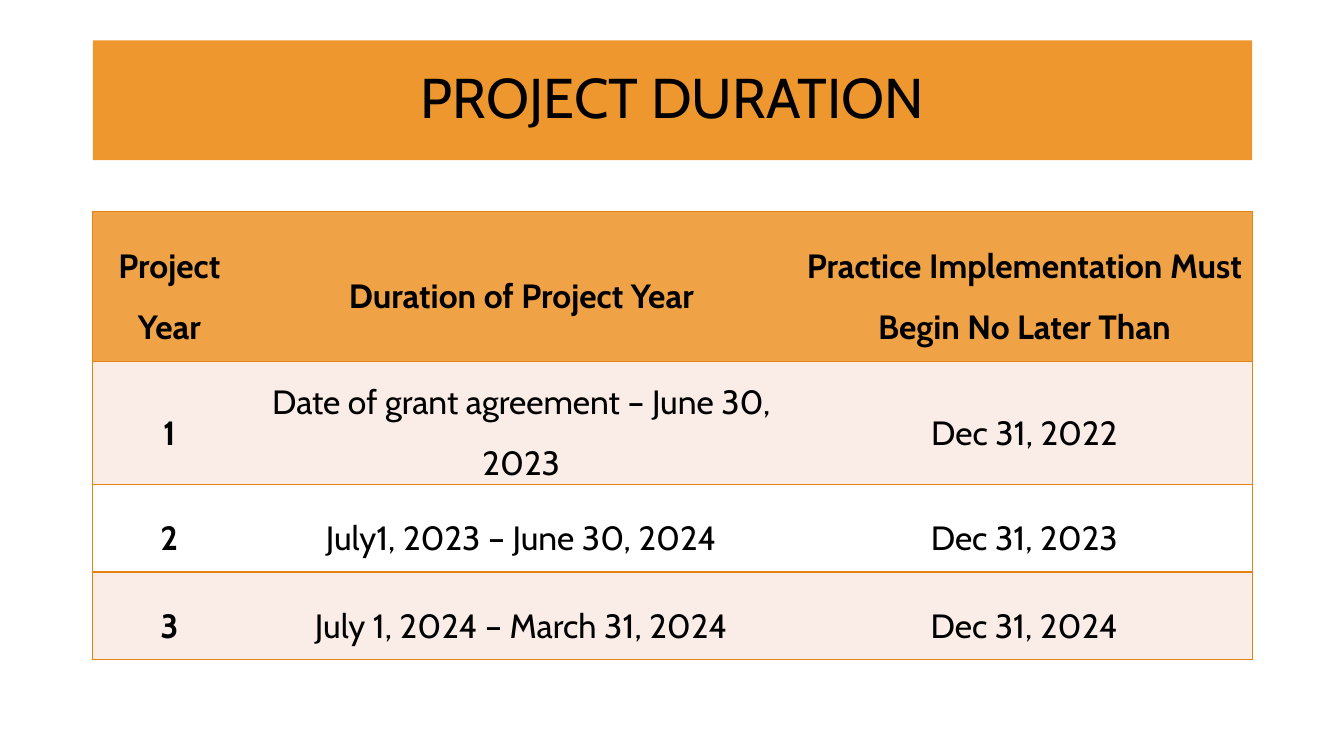
import pptx
import pptx.dml.color
import pptx.enum.text
import pptx.oxml
import pptx.oxml.ns
import pptx.util

inch = pptx.util.Inches
rgb = pptx.dml.color.RGBColor.from_string
middle = pptx.enum.text.MSO_ANCHOR.MIDDLE

theme = {
    "font": "Cabin", "ink": "000000", "title": "EE972E", "head": "F0A346",
    "band": "FAEDE7", "plain": "FFFFFF", "line": "E48312",
    "big": 40, "text": 24,
}


def write(frame, text, size, bold=False, space=1.0):
    """Put one centred paragraph into a text frame."""
    para = frame.paragraphs[0]
    para.alignment = pptx.enum.text.PP_ALIGN.CENTER
    para.line_spacing = space
    run = para.add_run()
    run.text = text
    run.font.name = theme["font"]
    run.font.size = pptx.util.Pt(size)
    run.font.bold = bold
    run.font.color.rgb = rgb(theme["ink"])


def edge(cell, side, shown):
    """Draw or hide one border of a cell."""
    fill = (f'<a:solidFill><a:srgbClr val="{theme["line"]}"/></a:solidFill>'
            if shown else "<a:noFill/>")
    space = pptx.oxml.ns.nsdecls("a")
    cell._tc.get_or_add_tcPr().append(pptx.oxml.parse_xml(
        f'<a:ln{side} {space} w="{pptx.util.Pt(1)}">{fill}</a:ln{side}>'))


# Slide, with one column of content shared by title and table
deck = pptx.Presentation()
deck.slide_width, deck.slide_height = inch(13.33), inch(7.5)
slide = deck.slides.add_slide(deck.slide_layouts[5])
left, width = inch(0.92), inch(11.5)

# Title bar
title = slide.shapes.title
title.left, title.top, title.width, title.height = left, inch(0.4), width, inch(1.19)
title.fill.solid()
title.fill.fore_color.rgb = rgb(theme["title"])
title.text_frame.vertical_anchor = middle
title.text_frame.auto_size = pptx.enum.text.MSO_AUTO_SIZE.NONE
write(title.text_frame, "PROJECT DURATION", theme["big"], space=0.9)

# Table content
rows = [
    ("Project Year", "Duration of Project Year",
     "Practice Implementation Must Begin No Later Than"),
    ("1", "Date of grant agreement – June 30, 2023", "Dec 31, 2022"),
    ("2", "July1, 2023 – June 30, 2024", "Dec 31, 2023"),
    ("3", "July 1, 2024 – March 31, 2024", "Dec 31, 2024"),
]
wide = [1.52, 5.46, 4.52]
high = [1.49] + [0.87] * 3
table = slide.shapes.add_table(len(rows), len(wide), left, inch(2.1),
                               width, inch(sum(high))).table
for col, size in zip(table.columns, wide):
    col.width = inch(size)

# Cells: outer frame and row rules, with odd rows tinted
for r, texts in enumerate(rows):
    table.rows[r].height = inch(high[r])
    shade = "head" if r == 0 else "band" if r % 2 else "plain"
    for c, text in enumerate(texts):
        cell = table.cell(r, c)
        cell.margin_left = cell.margin_right = inch(0.07)
        cell.margin_top = cell.margin_bottom = 0
        cell.vertical_anchor = middle
        for side, shown in (("L", c == 0), ("R", c == len(wide) - 1),
                            ("T", True), ("B", True)):
            edge(cell, side, shown)
        cell.fill.solid()
        cell.fill.fore_color.rgb = rgb(theme[shade])
        write(cell.text_frame, text, theme["text"],
              bold=r == 0 or c == 0, space=1.5)

deck.save("out.pptx")
